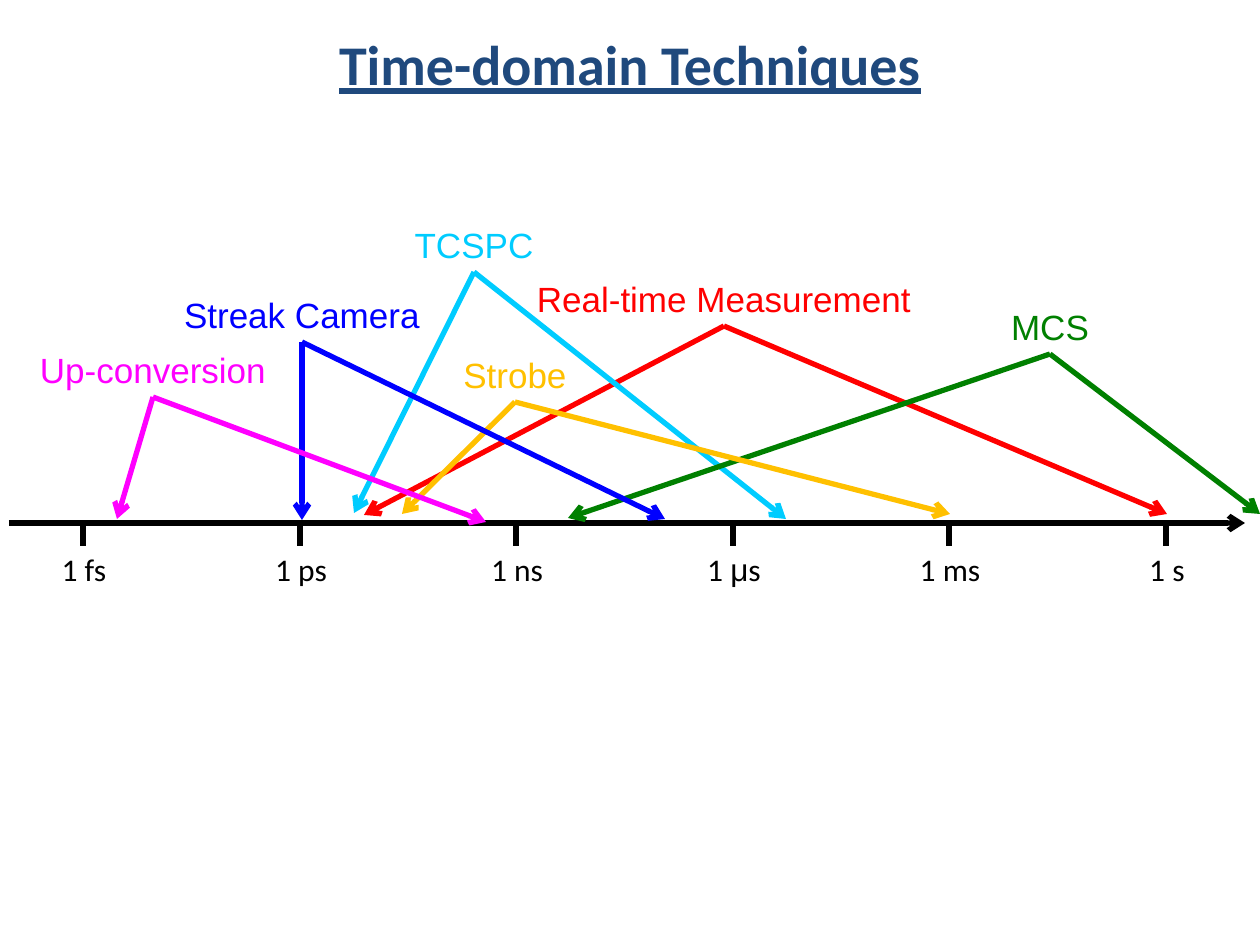
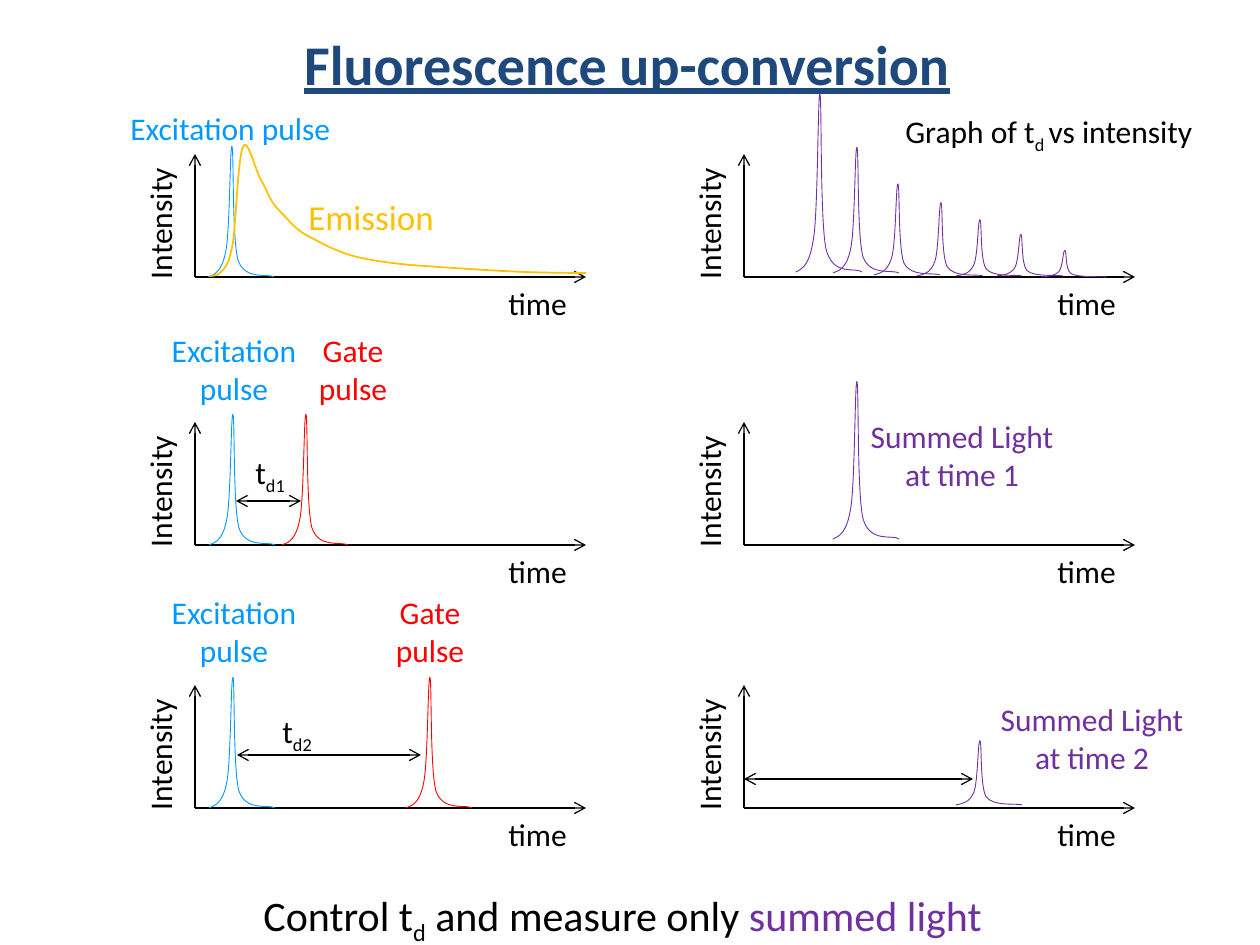
import pptx
import pptx.util
from pptx.dml.color import RGBColor
from pptx.enum.shapes import MSO_CONNECTOR
from pptx.enum.text import MSO_ANCHOR, MSO_AUTO_SIZE, PP_ALIGN
from pptx.oxml.ns import qn
from lxml import etree

SCALE = 914400 / 126  # EMU per px

BLACK = RGBColor(0x00, 0x00, 0x00)
NAVY = RGBColor(0x1F, 0x49, 0x7D)
RED = RGBColor(0xFF, 0x00, 0x00)
CYAN = RGBColor(0x00, 0xCC, 0xFF)
BLUE = RGBColor(0x00, 0x00, 0xFF)
GREEN = RGBColor(0x00, 0x80, 0x00)
AMBER = RGBColor(0xFF, 0xC0, 0x00)
MAGENTA = RGBColor(0xFF, 0x00, 0xFF)
SKY = RGBColor(0x00, 0x99, 0xFF)
PURPLE = RGBColor(0x70, 0x30, 0xA0)


def add_text(slide, words, box, color=BLACK, size=18, font="Calibri",
             align=PP_ALIGN.LEFT, wrap=True):
    """Write words in a box; newlines part paragraphs and bars part runs."""
    label = slide.shapes.add_textbox(*(round(v * SCALE) for v in box))
    frame = label.text_frame
    frame.word_wrap = wrap
    frame.auto_size = MSO_AUTO_SIZE.SHAPE_TO_FIT_TEXT
    frame.text = words.replace("|", "")
    for paragraph, line in zip(frame.paragraphs, words.split("\n")):
        paragraph.alignment = align
        first, *others = line.split("|")
        paragraph.text = first
        for part in others:
            paragraph.add_run().text = part
        for run in paragraph.runs:
            run.font.name = font
            run.font.size = pptx.util.Pt(size)
            run.font.color.rgb = color
    return label


def add_line(slide, start, end, color=BLACK, width=0.75, arrows=("tailEnd",)):
    connector = slide.shapes.add_connector(
        MSO_CONNECTOR.STRAIGHT, *(round(v * SCALE) for v in (*start, *end)))
    connector.line.color.rgb = color
    connector.line.width = pptx.util.Pt(width)
    properties = connector._element.spPr
    for arrow in arrows:
        etree.SubElement(properties.find(qn("a:ln")), qn("a:" + arrow), type="arrow")
    etree.SubElement(properties, qn("a:effectLst"))
    return connector


deck = pptx.Presentation()
deck.slide_width = round(1260 * SCALE)
deck.slide_height = round(945 * SCALE)

# Both slides with their titles
slides = []
for heading, left in (("Time-domain Techniques", 63), ("Fluorescence up-conversion", 60)):
    slide = deck.slides.add_slide(deck.slide_layouts[6])
    title = add_text(slide, heading, (left, 0, 1134, 126), NAVY, 32, align=PP_ALIGN.CENTER)
    title.text_frame.auto_size = MSO_AUTO_SIZE.NONE
    title.text_frame.vertical_anchor = MSO_ANCHOR.MIDDLE
    title_font = title.text_frame.paragraphs[0].runs[0].font
    title_font.bold = True
    title_font.underline = True
    slides.append(slide)
techniques_slide, upconversion_slide = slides

# Slide 1: time scale
SCALE_Y = 523
add_line(techniques_slide, (9, SCALE_Y), (1245, SCALE_Y), width=3)
for i, duration in enumerate(("1 fs", "1 ps", "1 ns", "1 |μ|s", "1 ms", "1 s")):
    tick = round(83 + 216.6 * i)
    add_line(techniques_slide, (tick, SCALE_Y), (tick, SCALE_Y + 23), width=3, arrows=())
    tick_label = add_text(techniques_slide, duration, (tick - 43, 544, 88, 50),
                          align=PP_ALIGN.CENTER)
    if "μ" in duration:
        tick_label.text_frame.paragraphs[0].runs[1].font.name = "Arial"

# Slide 1: each technique points to the ends of its range
techniques = [
    ("Real-time Measurement", (523, 271, 402, 55), RED, (364, 515), (1167, 514)),
    ("TCSPC", (401, 217, 146, 55), CYAN, (354, 513), (786, 519)),
    ("MCS", (998, 299, 104, 55), GREEN, (568, 518), (1260, 514)),
    ("Strobe", (450, 347, 130, 55), AMBER, (402, 514), (950, 514)),
    ("Streak Camera", (170, 287, 264, 55), BLUE, (302, 520), (665, 519)),
    ("Up-conversion", (26, 342, 254, 55), MAGENTA, (117, 519), (486, 522)),
]
for name, box, color, shortest, longest in techniques:
    technique = add_text(techniques_slide, name, box, color, 20, "Arial",
                         PP_ALIGN.CENTER, wrap=False)
    apex = (box[0] + box[2] / 2, box[1] + box[3])
    for limit in (shortest, longest):
        add_line(techniques_slide, apex, limit, color, 3).begin_connect(technique, 2)

# Slide 2: six pairs of axes
for base in (277, 545, 808):
    for origin in (195, 744):
        add_line(upconversion_slide, (origin, base), (origin, base - 123))
        add_line(upconversion_slide, (origin, base), (origin + 391, base))
        intensity = add_text(upconversion_slide, "Intensity", (origin - 111, base - 86, 151, 50))
        intensity.rotation = 270
        add_text(upconversion_slide, "time", (origin + 301, base + 1, 84, 50))

# Slide 2: pulses share one outline, as (px across, share of height)
PULSE = [(0, 0), (7, 0.02), (14, 0.04), (18, 0.2), (22, 0.36), (22, 1), (24, 0.99),
         (26, 0.98), (24, 0.3), (30, 0.13), (37, -0.03), (60, 0.03), (66, 0)]
pulses = [  # colour, left, base, height
    (SKY, 208, 277, 132), (SKY, 209, 545, 132), (SKY, 209, 808, 132),
    (RED, 282, 545, 132), (RED, 406, 808, 132),
    (PURPLE, 833, 539, 159), (PURPLE, 956, 805, 65),
    (PURPLE, 796, 272, 180), (PURPLE, 833, 273, 127), (PURPLE, 874, 275, 92),
    (PURPLE, 917, 276, 74), (PURPLE, 956, 276, 57), (PURPLE, 997, 276, 42),
    (PURPLE, 1041, 277, 27),
]
emission = [
    (210, 276), (215, 276), (219, 275), (223, 270), (227, 265), (229, 263), (233, 243),
    (236, 222), (238, 158), (243, 147), (247, 136), (255, 168), (260, 178),
    (265, 186), (268, 195), (273, 203), (278, 210), (284, 215), (290, 222),
    (296, 228), (301, 233), (312, 238), (323, 244), (336, 251), (353, 256),
    (369, 260), (381, 262), (410, 265), (438, 267), (495, 271), (524, 272),
    (554, 273), (570, 273), (586, 273),
]
curves = [(color, 0.5, [(left + x, base - height * share) for x, share in PULSE])
          for color, left, base, height in pulses]
curves.append((AMBER, 1, emission))

for color, width, controls in curves:
    (start_x, start_y), *rest = [(round(x * SCALE), round(y * SCALE)) for x, y in controls]
    builder = upconversion_slide.shapes.build_freeform(start_x, start_y)
    builder.add_line_segments(rest, close=False)
    curve = builder.convert_to_shape()
    curve.fill.background()
    curve.line.color.rgb = color
    curve.line.width = pptx.util.Pt(width)
    curve.shadow.inherit = False
    # Every three straight segments become one cubic Bézier piece
    outline = next(curve._element.iter(qn("a:path")))
    segments = outline.findall(qn("a:lnTo"))
    for k in range(0, len(segments), 3):
        piece = etree.SubElement(outline, qn("a:cubicBezTo"))
        for segment in segments[k:k + 3]:
            piece.append(segment[0])
            outline.remove(segment)

# Slide 2: curve labels
add_text(upconversion_slide, "Excitation pulse", (118, 103, 228, 50), SKY, wrap=False)
add_text(upconversion_slide, "Emission", (296, 189, 151, 55), AMBER, 20)
for words, box, color in (
    ("Excitation pulse", (152, 325, 164, 89), SKY),
    ("Gate\npulse", (271, 325, 164, 89), RED),
    ("Excitation pulse", (152, 587, 164, 89), SKY),
    ("Gate\npulse", (348, 587, 164, 89), RED),
    ("Summed Light at time 1", (845, 411, 234, 89), PURPLE),
    ("Summed Light at time 2", (975, 694, 234, 89), PURPLE),
):
    add_text(upconversion_slide, words, box, color, align=PP_ALIGN.CENTER)

# Slide 2: delays
for left, right, y in ((236, 301, 501), (237, 421, 755), (744, 973, 779)):
    add_line(upconversion_slide, (left, y), (right, y), arrows=("headEnd", "tailEnd"))

# Slide 2: texts whose second run is a subscript
for words, box, size in (
    ("t|d1", (243, 447, 58, 50), 18),
    ("t|d2", (270, 706, 58, 50), 18),
    ("Graph of t|d |vs intensity", (893, 106, 325, 50), 18),
    ("Control t|d| and measure only |summed light", (251, 883, 751, 63), 24),
):
    note = add_text(upconversion_slide, words, box, size=size, wrap=False)
    runs = note.text_frame.paragraphs[0].runs
    runs[1].font._element.set("baseline", "-25000")
    if runs[-1].text == "summed light":
        runs[-1].font.color.rgb = PURPLE

deck.save("out.pptx")
